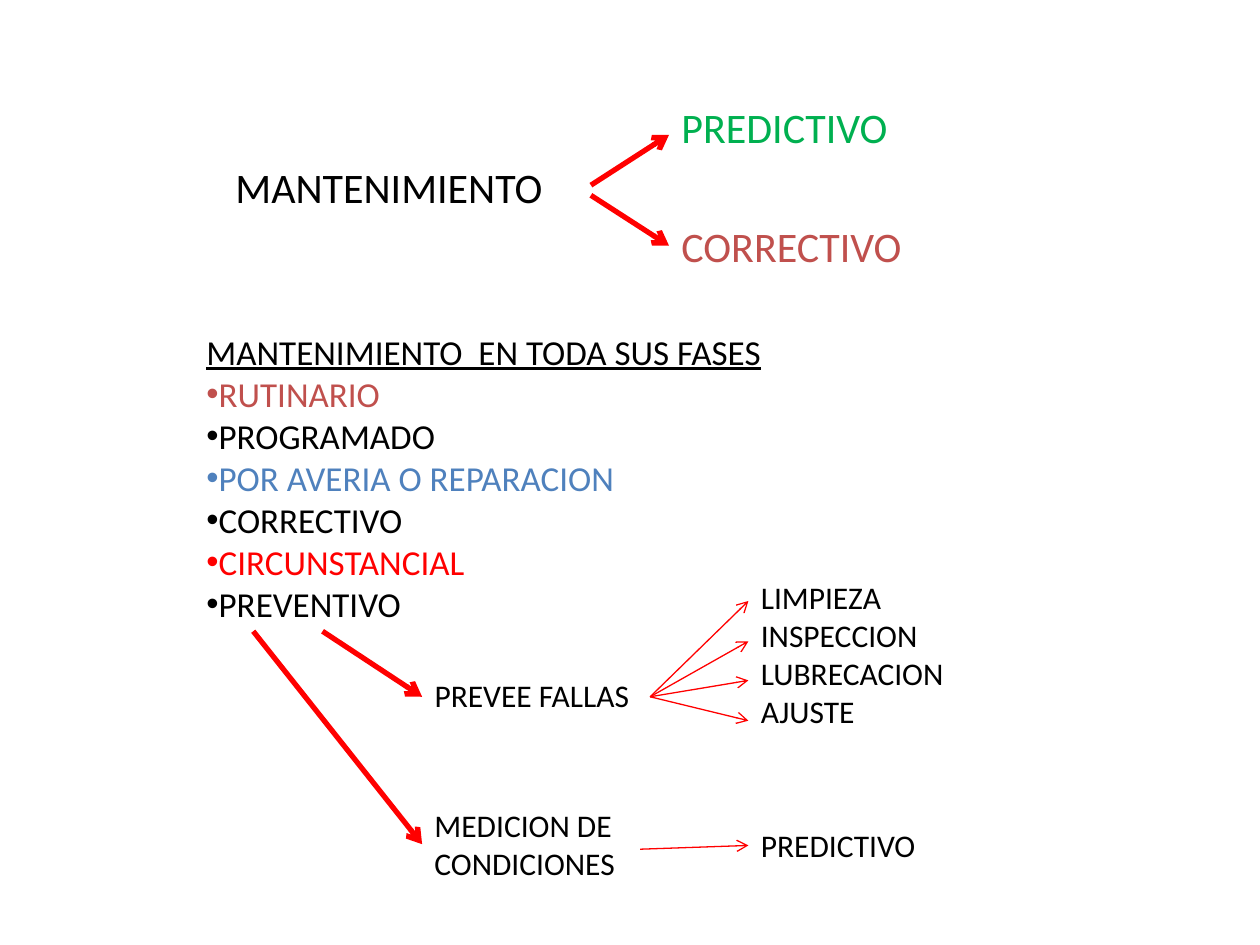
from lxml.etree import SubElement
from pptx import Presentation
from pptx.dml.color import RGBColor
from pptx.enum.shapes import MSO_CONNECTOR
from pptx.enum.text import MSO_AUTO_SIZE
from pptx.oxml.ns import qn
from pptx.util import Inches, Pt

BLACK, RED, GREEN = "000000", "FF0000", "00B050"
BRICK, BLUE = "C0504D", "4F81BD"

deck = Presentation()
deck.slide_width, deck.slide_height = Inches(10), Inches(7.5)
page = deck.slides.add_slide(deck.slide_layouts[6])


def add_text(left, top, width, height, size, lines):
    """Add a text box with one paragraph per (text, colour) pair."""
    box = page.shapes.add_textbox(*map(Inches, (left, top, width, height)))
    frame = box.text_frame
    frame.word_wrap = True
    frame.auto_size = MSO_AUTO_SIZE.SHAPE_TO_FIT_TEXT
    for index, (text, colour) in enumerate(lines):
        para = frame.add_paragraph() if index else frame.paragraphs[0]
        span = para.add_run()
        span.text = text
        for name, value in {"name": "Calibri", "size": Pt(size)}.items():
            setattr(span.font, name, value)
        span.font.color.rgb = RGBColor.from_string(colour)
    return frame.paragraphs


def add_arrow(start, end, weight):
    arrow = page.shapes.add_connector(
        MSO_CONNECTOR.STRAIGHT, *map(Inches, (*start, *end)))
    arrow.line.color.rgb = RGBColor.from_string(RED)
    arrow.line.width = Pt(weight)
    properties = arrow._element.spPr
    SubElement(properties.find(qn("a:ln")), qn("a:tailEnd"), type="arrow")
    SubElement(properties, qn("a:effectLst"))


# Maintenance and its two kinds
add_text(1.77, 1.23, 2.83, 0.5, 24, [("MANTENIMIENTO", BLACK)])
add_text(5.31, 0.76, 2.05, 0.5, 24, [("PREDICTIVO", GREEN)])
add_text(5.31, 1.7, 2.68, 0.5, 24, [("CORRECTIVO", BRICK)])

# Bulleted list of phases under an underlined heading
heading, *phases = add_text(1.54, 2.57, 7.8, 2.46, 20, [
    ("MANTENIMIENTO  EN TODA SUS FASES", BLACK),
    ("RUTINARIO", BRICK),
    ("PROGRAMADO", BLACK),
    ("POR AVERIA O REPARACION", BLUE),
    ("CORRECTIVO", BLACK),
    ("CIRCUNSTANCIAL", RED),
    ("PREVENTIVO", BLACK),
])
heading.runs[0].font.underline = True
for phase in phases:
    settings = phase._p.get_or_add_pPr()
    SubElement(settings, qn("a:buFont"), typeface="Arial")
    SubElement(settings, qn("a:buChar"), char="•")

# Branches of preventive maintenance
for left, top, width, height, lines in [
    (3.35, 5.32, 1.81, 0.4, ["PREVEE FALLAS"]),
    (3.35, 6.35, 1.97, 0.71, ["MEDICION DE", "CONDICIONES"]),
    (5.94, 4.54, 2.44, 1.31,
     ["LIMPIEZA", "INSPECCION", "LUBRECACION", "AJUSTE"]),
    (5.94, 6.51, 1.65, 0.4, ["PREDICTIVO"]),
]:
    add_text(left, top, width, height, 18, [(line, BLACK) for line in lines])

# Thick arrows for the main branches, thin ones for the details
for start, end in [
    ((4.69, 1.47), (5.31, 1.07)),
    ((4.69, 1.55), (5.31, 1.95)),
    ((2.56, 5.01), (3.35, 5.53)),
    ((2.01, 5.01), (3.35, 6.7)),
]:
    add_arrow(start, end, 3)

add_arrow((5.08, 6.74), (5.94, 6.71), 0.75)
for task_y in (4.77, 5.09, 5.4, 5.72):
    add_arrow((5.16, 5.53), (5.94, task_y), 0.75)

deck.save("out.pptx")
